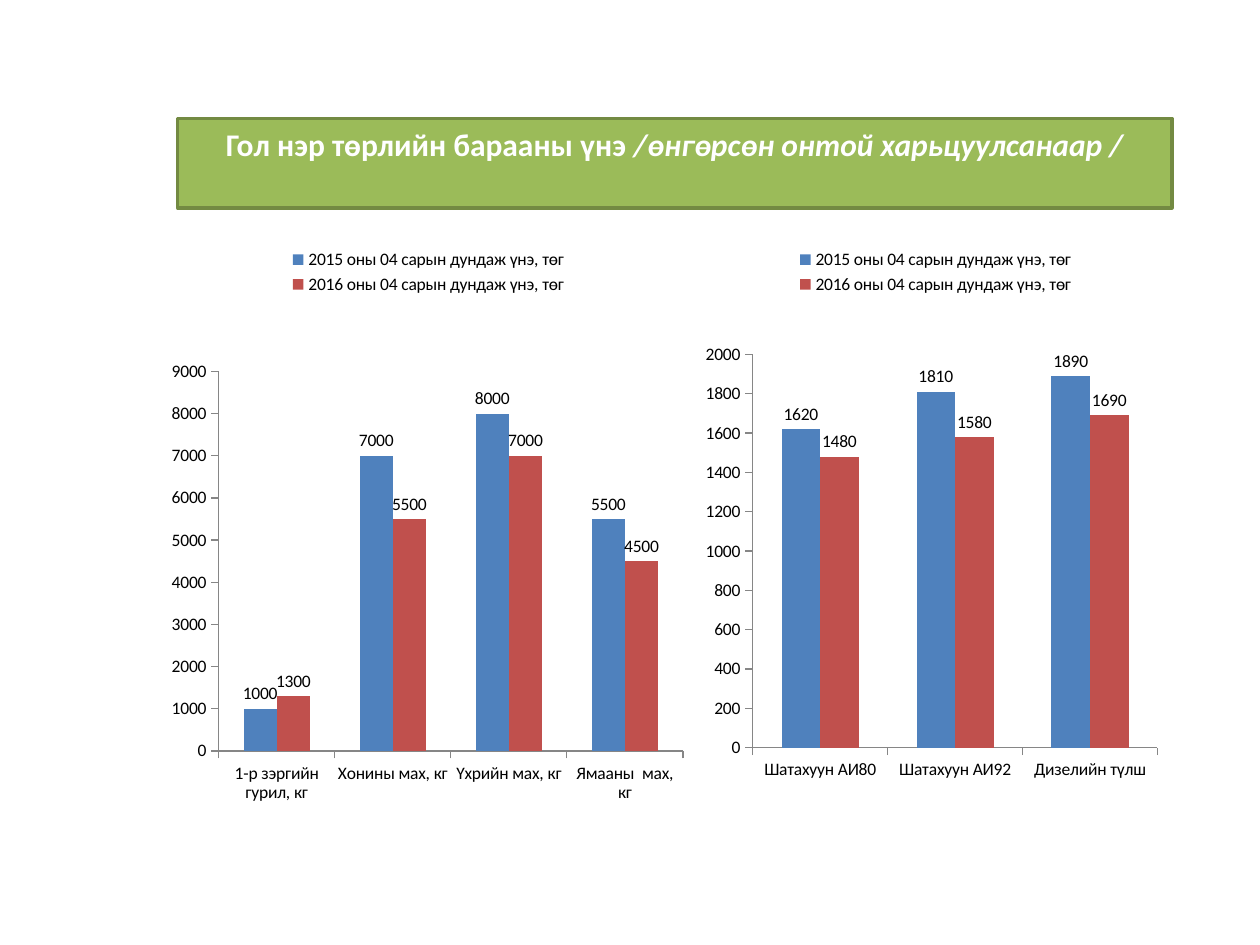
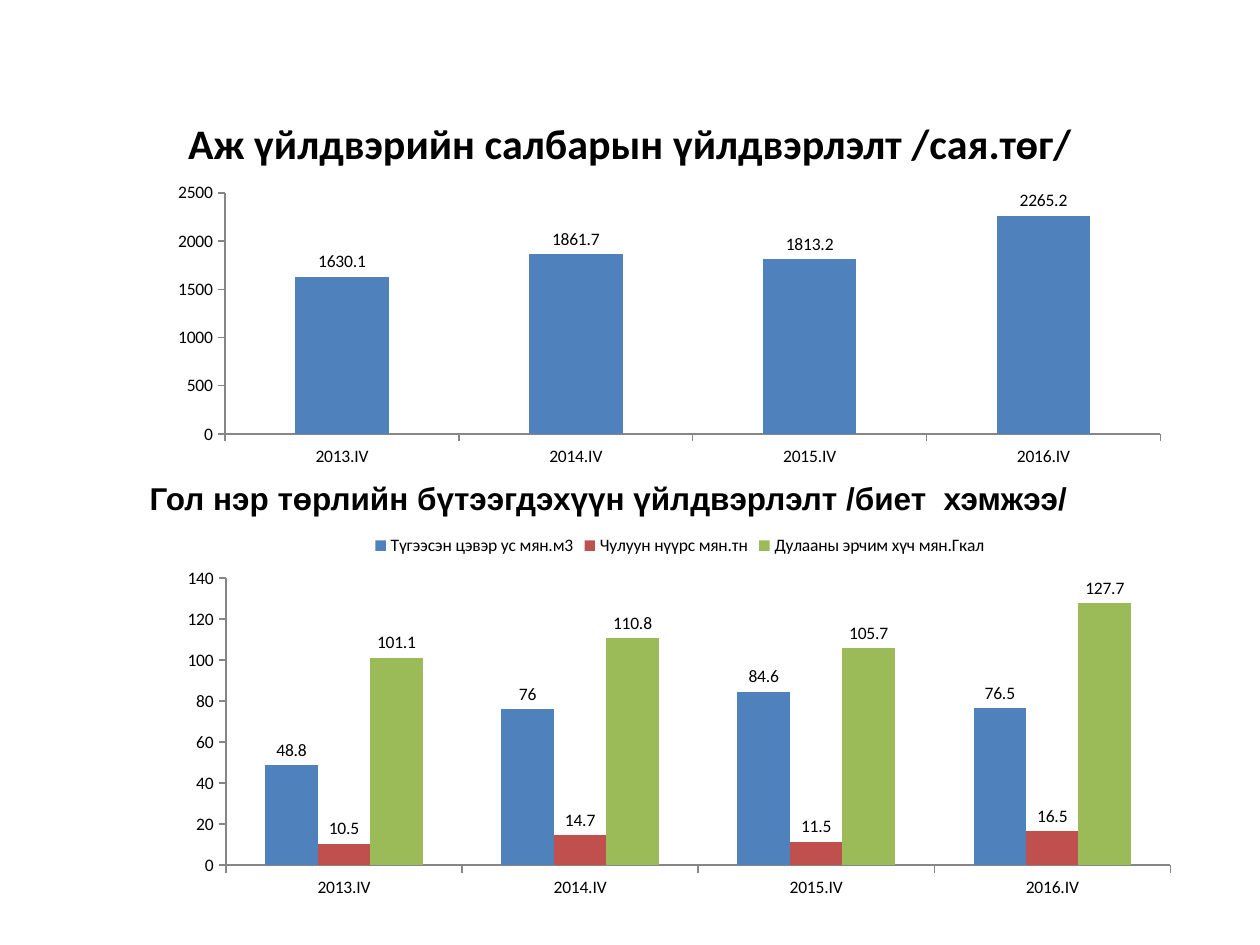
from dataclasses import dataclass

import pptx
import pptx.chart.chart
import pptx.chart.data
import pptx.dml.color
import pptx.enum.chart
import pptx.enum.text
import pptx.oxml
import pptx.oxml.ns
import pptx.shapes.base
import pptx.slide
import pptx.text.text
import pptx.util

SLIDE_WIDTH = pptx.util.Inches(10)
SLIDE_HEIGHT = pptx.util.Inches(7.5)
COLOURS = {
    "text": "000000",
    "light": "FFFFFF",
    "blue": "4F81BD",
    "red": "C0504D",
    "green": "9BBB59",
    "green edge": "738A42",
    "axis": "868686",
}
SERIES_COLOURS = ("blue", "red", "green")
HEADING_FONT, LABEL_FONT = "Calibri", "Arial"
TITLE_ONLY_LAYOUT = 5
PRICE_SERIES = tuple(f"{year} оны 04 сарын дундаж үнэ, төг" for year in (2015, 2016))
QUARTERS = tuple(f"{year}.IV" for year in range(2013, 2017))


@dataclass(frozen=True)
class Box:
    """A rectangle in percent of whatever contains it."""

    left: float
    top: float
    width: float
    height: float


@dataclass(frozen=True)
class ColumnChart:
    box: Box
    plot: Box
    categories: tuple[str, ...]
    series: dict[str, tuple[float, ...]]
    axis_maximum: float
    axis_step: float


FOOD_PRICES = ColumnChart(
    Box(12.5, 24.93, 43, 68.8),
    Box(11.3, 20.9, 85.7, 58.4),
    ("1-р зэргийн гурил, кг", "Хонины мах, кг", "Үхрийн мах, кг", "Ямааны  мах, кг"),
    dict(zip(PRICE_SERIES, ((1000, 7000, 8000, 5500), (1300, 5500, 7000, 4500)))),
    9000,
    1000,
)
FUEL_PRICES = ColumnChart(
    Box(55.5, 24.93, 37.5, 64.53),
    Box(11.3, 19.5, 85.7, 64.5),
    ("Шатахуун АИ80", "Шатахуун АИ92", "Дизелийн түлш"),
    dict(zip(PRICE_SERIES, ((1620, 1810, 1890), (1480, 1580, 1690)))),
    2000,
    200,
)
INDUSTRY_OUTPUT = ColumnChart(
    Box(12.5, 18.8, 81.3, 31.2),
    Box(6.6, 5.2, 91.3, 81.8),
    QUARTERS,
    {"Series 1": (1630.1, 1861.7, 1813.2, 2265.2)},
    2500,
    500,
)
PRODUCT_OUTPUT = ColumnChart(
    Box(13.3, 55.2, 81.3, 40.67),
    Box(5.7, 14.7, 92.2, 74.7),
    QUARTERS,
    {
        "Түгээсэн цэвэр ус мян.м3": (48.8, 76, 84.6, 76.5),
        "Чулуун нүүрс мян.тн": (10.5, 14.7, 11.5, 16.5),
        "Дулааны эрчим хүч мян.Гкал": (101.1, 110.8, 105.7, 127.7),
    },
    140,
    20,
)


def colour(name: str) -> pptx.dml.color.RGBColor:
    return pptx.dml.color.RGBColor.from_string(COLOURS[name])


def on_slide(box: Box) -> tuple[int, int, int, int]:
    """Left, top, width and height in EMU."""
    return (
        int(SLIDE_WIDTH * box.left / 100),
        int(SLIDE_HEIGHT * box.top / 100),
        int(SLIDE_WIDTH * box.width / 100),
        int(SLIDE_HEIGHT * box.height / 100),
    )


def format_font(font: pptx.text.text.Font, size: float, colour_name: str,
                bold: bool = False, name: str = HEADING_FONT) -> None:
    font.name = name
    font.size = pptx.util.Pt(size)
    font.bold = bold
    font.color.rgb = colour(colour_name)


def add_title(slide: pptx.slide.Slide, box: Box, parts: tuple[str, ...], size: float,
              colour_name: str = "text") -> pptx.shapes.base.BaseShape:
    """Fill the title placeholder; every part after the first is italic."""
    title = slide.shapes.title
    title.left, title.top, title.width, title.height = on_slide(box)
    title.text_frame.auto_size = pptx.enum.text.MSO_AUTO_SIZE.NONE
    title.text_frame.vertical_anchor = pptx.enum.text.MSO_ANCHOR.MIDDLE
    paragraph = title.text_frame.paragraphs[0]
    paragraph.alignment = pptx.enum.text.PP_ALIGN.CENTER
    for index, part in enumerate(parts):
        run = paragraph.add_run()
        run.text = part
        format_font(run.font, size, colour_name, bold=True)
        run.font.italic = index > 0
    return title


def add_subheading(slide: pptx.slide.Slide, box: Box, text: str) -> None:
    text_frame = slide.shapes.add_textbox(*on_slide(box)).text_frame
    text_frame.word_wrap = True
    text_frame.text = text
    format_font(text_frame.paragraphs[0].runs[0].font, 18, "text", True, LABEL_FONT)


def place_plot(chart: pptx.chart.chart.Chart, plot: Box) -> None:
    """Fix the inner plot area as shares of the chart."""
    plot_area = chart._chartSpace.find(".//" + pptx.oxml.ns.qn("c:plotArea"))
    for old_layout in plot_area.findall(pptx.oxml.ns.qn("c:layout")):
        plot_area.remove(old_layout)
    settings = {"layoutTarget": "inner", "xMode": "edge", "yMode": "edge",
                "x": plot.left / 100, "y": plot.top / 100,
                "w": plot.width / 100, "h": plot.height / 100}
    children = "".join(f'<c:{tag} val="{value}"/>' for tag, value in settings.items())
    plot_area.insert(0, pptx.oxml.parse_xml(
        f'<c:layout {pptx.oxml.ns.nsdecls("c")}>'
        f"<c:manualLayout>{children}</c:manualLayout></c:layout>"))


def add_column_chart(slide: pptx.slide.Slide, content: ColumnChart) -> None:
    data = pptx.chart.data.CategoryChartData()
    data.categories = content.categories
    for name, values in content.series.items():
        data.add_series(name, values)
    chart = slide.shapes.add_chart(
        pptx.enum.chart.XL_CHART_TYPE.COLUMN_CLUSTERED, *on_slide(content.box), data).chart
    format_font(chart.font, 10, "text")
    chart.has_title = False
    chart.has_legend = len(content.series) > 1
    if chart.has_legend:
        chart.legend.position = pptx.enum.chart.XL_LEGEND_POSITION.TOP
        chart.legend.include_in_layout = False

    for axis in (chart.category_axis, chart.value_axis):
        axis.has_major_gridlines = False
        axis.major_tick_mark = pptx.enum.chart.XL_TICK_MARK.OUTSIDE
        axis.format.line.color.rgb = colour("axis")
        axis.format.line.width = pptx.util.Pt(0.75)
    chart.value_axis.minimum_scale = 0
    chart.value_axis.maximum_scale = content.axis_maximum
    chart.value_axis.major_unit = content.axis_step

    plot = chart.plots[0]
    plot.vary_by_categories = False
    plot.gap_width = 150
    for series, colour_name in zip(plot.series, SERIES_COLOURS):
        series.format.fill.solid()
        series.format.fill.fore_color.rgb = colour(colour_name)
        series.data_labels.show_value = True
        series.data_labels.position = pptx.enum.chart.XL_LABEL_POSITION.OUTSIDE_END
    place_plot(chart, content.plot)


def add_price_slide(presentation: pptx.presentation.Presentation) -> None:
    slide = presentation.slides.add_slide(presentation.slide_layouts[TITLE_ONLY_LAYOUT])
    band = add_title(
        slide, Box(14.1, 12.53, 78.9, 9.47),
        ("Гол нэр төрлийн барааны үнэ ", "/өнгөрсөн онтой харьцуулсанаар /"), 18, "light")
    band.text_frame.vertical_anchor = pptx.enum.text.MSO_ANCHOR.TOP
    band.fill.solid()
    band.fill.fore_color.rgb = colour("green")
    band.line.color.rgb = colour("green edge")
    band.line.width = pptx.util.Pt(2)
    add_column_chart(slide, FUEL_PRICES)
    add_column_chart(slide, FOOD_PRICES)


def add_output_slide(presentation: pptx.presentation.Presentation) -> None:
    slide = presentation.slides.add_slide(presentation.slide_layouts[TITLE_ONLY_LAYOUT])
    add_title(slide, Box(5, 10.4, 90, 9.33),
              ("Аж үйлдвэрийн салбарын үйлдвэрлэлт /сая.төг/",), 24)
    add_subheading(slide, Box(10.9, 50, 86.7, 5.33),
                   "Гол нэр төрлийн бүтээгдэхүүн үйлдвэрлэлт /биет  хэмжээ/")
    add_column_chart(slide, PRODUCT_OUTPUT)
    add_column_chart(slide, INDUSTRY_OUTPUT)


def main() -> None:
    presentation = pptx.Presentation()
    presentation.slide_width = SLIDE_WIDTH
    presentation.slide_height = SLIDE_HEIGHT
    add_price_slide(presentation)
    add_output_slide(presentation)
    presentation.save("out.pptx")


if __name__ == "__main__":
    main()
